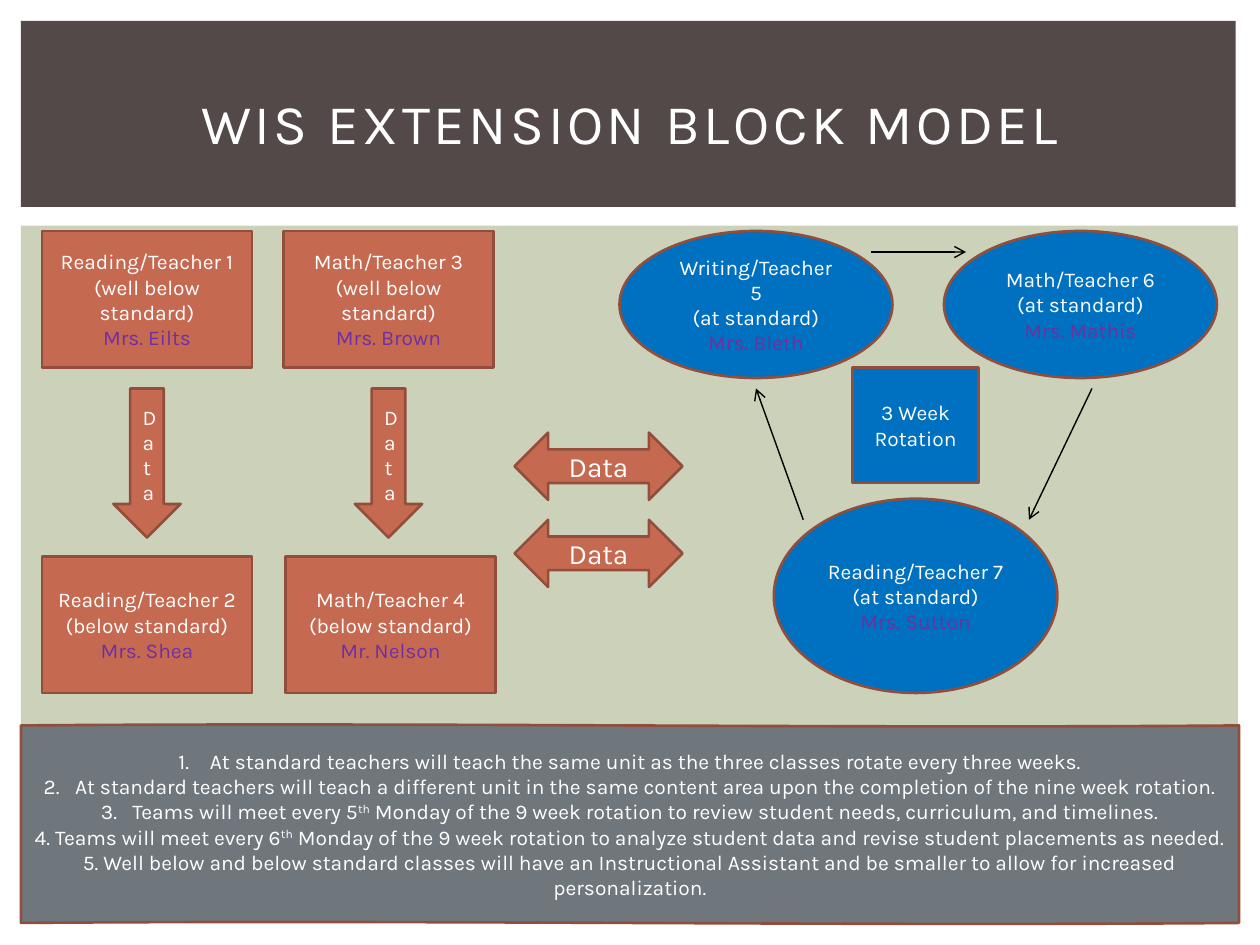
"""Build the extension block model slide."""
from dataclasses import dataclass

from lxml.etree import SubElement
from pptx import Presentation
from pptx.dml.color import RGBColor
from pptx.enum.shapes import MSO_CONNECTOR, MSO_SHAPE
from pptx.enum.text import MSO_ANCHOR, PP_ALIGN
from pptx.oxml.ns import qn
from pptx.util import Inches, Pt

COLUMNS, ROWS = 120, 90
WIDTH, HEIGHT = Inches(10), Inches(7.5)
FONT = "Karla"
WHITE, BLACK, SAGE, BROWN = "FFFFFF", "000000", "CCD1B9", "534949"
RUST, EDGE, BLUE, PURPLE, GREY = "C66951", "924E3C", "0070C0", "7030A0", "6F777D"


@dataclass(frozen=True)
class Box:
    """A place on the grid: left column, top row, columns wide, rows high."""

    column: float
    row: float
    columns: float
    rows: float


@dataclass(frozen=True)
class Teacher:
    """One class with its subject, level and teacher."""

    box: Box
    subject: str
    level: str
    name: str
    kind: MSO_SHAPE = MSO_SHAPE.RECTANGLE
    fill: str = RUST


@dataclass(frozen=True)
class Label:
    """A filled shape with one caption."""

    box: Box
    text: str
    kind: MSO_SHAPE
    size: int = 12
    fill: str = RUST


@dataclass(frozen=True)
class Arrow:
    """A rotation arrow between two grid points."""

    start: tuple[float, float]
    end: tuple[float, float]


@dataclass(frozen=True)
class Rule:
    """A line of the rules; its pieces alternate normal and superscript."""

    pieces: tuple[str, ...]
    numbered: bool = False


OVAL, DOWN, BOTH = MSO_SHAPE.OVAL, MSO_SHAPE.DOWN_ARROW, MSO_SHAPE.LEFT_RIGHT_ARROW
TEACHERS = (
    Teacher(Box(4, 22, 20, 13), "Reading/Teacher 1", "(well below standard)", "Mrs. Eilts"),
    Teacher(Box(27, 22, 20, 13), "Math/Teacher 3", "(well below standard)", "Mrs. Brown"),
    Teacher(Box(4, 53, 20, 13), "Reading/Teacher 2", "(below standard)", "Mrs. Shea"),
    Teacher(Box(27.2, 53, 20, 13), "Math/Teacher 4", "(below standard)", "Mr. Nelson"),
    Teacher(Box(59, 22, 26, 14), "Writing/Teacher 5", "(at standard)", "Mrs. Bleth", OVAL, BLUE),
    Teacher(Box(73.7, 47.5, 27, 18.5), "Reading/Teacher 7", "(at standard)", "Mrs. Sutton", OVAL, BLUE),
    Teacher(Box(89.9, 22, 26, 14), "Math/Teacher 6", "(at standard)", "Mrs. Mathis", OVAL, BLUE),
)
LABELS = (
    *(Label(Box(49, row, 16, 6.4), "Data", BOTH, 16) for row in (41.2, 49.5)),
    *(Label(Box(column, 37, 6.4, 14.2), "Data", DOWN) for column in (10.8, 33.8)),
    Label(Box(81.2, 35, 12, 11), "3 Week Rotation", MSO_SHAPE.RECTANGLE, fill=BLUE),
)
ARROWS = (
    Arrow((104, 37), (98, 49.5)),
    Arrow((76.5, 49.5), (72, 37)),
    Arrow((83, 24), (92, 24)),
)
RULES = (
    Rule(("At standard teachers will teach the same unit as the three classes rotate every three weeks.",), True),
    Rule(("At standard teachers will teach a different unit in the same content area upon the "
          "completion of the nine week rotation.",), True),
    Rule(("Teams will meet every 5", "th", " Monday of the 9 week rotation to review student needs, "
          "curriculum, and timelines."), True),
    Rule(("4. Teams will meet every 6", "th", " Monday of the 9 week rotation to analyze student data "
          "and revise student placements as needed.")),
    Rule(("5. Well below and below standard classes will have an Instructional Assistant and be "
          "smaller to allow for increased personalization.",)),
)


def color(value: str) -> RGBColor:
    """Turn a hex string into a colour."""
    return RGBColor.from_string(value)


def across(columns: float) -> int:
    """Convert grid columns to a length."""
    return round(WIDTH * columns / COLUMNS)


def down(rows: float) -> int:
    """Convert grid rows to a length."""
    return round(HEIGHT * rows / ROWS)


def place(box: Box) -> tuple[int, int, int, int]:
    """Give the left, top, width and height of a box."""
    return across(box.column), down(box.row), across(box.columns), down(box.rows)


def add_block(slide, kind: MSO_SHAPE, box: Box, fill: str, edge: str | None = EDGE):
    """Draw a filled shape, outlined unless edge is None."""
    shape = slide.shapes.add_shape(kind, *place(box))
    shape.shadow.inherit = False
    shape.fill.solid()
    shape.fill.fore_color.rgb = color(fill)
    if edge is None:
        shape.line.fill.background()
    else:
        shape.line.color.rgb = color(edge)
        shape.line.width = Pt(1.5)
    return shape


def write(shape, lines: tuple[tuple[str, ...], ...], size: int = 12, last: str = WHITE) -> None:
    """Write centred paragraphs; odd pieces are raised and the last line has its own colour."""
    frame = shape.text_frame
    frame.word_wrap = True
    frame.vertical_anchor = MSO_ANCHOR.MIDDLE
    for index, pieces in enumerate(lines):
        paragraph = frame.add_paragraph() if index else frame.paragraphs[0]
        paragraph.alignment = PP_ALIGN.CENTER
        paragraph.font.name = FONT
        paragraph.font.size = Pt(size)
        paragraph.font.color.rgb = color(last if index == len(lines) - 1 else WHITE)
        for position, piece in enumerate(pieces):
            run = paragraph.add_run()
            run.text = piece
            if position % 2:
                run.font._element.set("baseline", "30000")


def add_title(slide, text: str) -> None:
    """Write the letter-spaced title."""
    title = slide.shapes.add_textbox(*place(Box(5, 4.7, 110, 13.8)))
    write(title, ((text,),), 32)
    title.text_frame.paragraphs[0].runs[0].font._element.set("spc", "200")


def add_teacher(slide, teacher: Teacher) -> None:
    """Draw a class with the teacher's name in purple."""
    shape = add_block(slide, teacher.kind, teacher.box, teacher.fill)
    write(shape, ((teacher.subject,), (teacher.level,), (teacher.name,)), last=PURPLE)


def add_label(slide, label: Label) -> None:
    """Draw a captioned shape."""
    write(add_block(slide, label.kind, label.box, label.fill), ((label.text,),), label.size)


def add_arrow(slide, arrow: Arrow) -> None:
    """Draw a thin line with an open arrowhead at its end."""
    (left, top), (right, bottom) = arrow.start, arrow.end
    connector = slide.shapes.add_connector(
        MSO_CONNECTOR.STRAIGHT, across(left), down(top), across(right), down(bottom))
    connector.line.color.rgb = color(BLACK)
    connector.line.width = Pt(0.79)
    SubElement(connector.line._get_or_add_ln(), qn("a:tailEnd"), type="arrow")
    SubElement(connector._element.spPr, qn("a:effectLst"))


def add_rules(slide, rules: tuple[Rule, ...]) -> None:
    """Draw the panel of rules."""
    panel = add_block(slide, MSO_SHAPE.WAVE, Box(2, 69, 116, 19), GREY)
    panel.adjustments[0], panel.adjustments[1] = 0.005, 0
    write(panel, tuple(rule.pieces for rule in rules))
    for rule, paragraph in zip(rules, panel.text_frame.paragraphs):
        if rule.numbered:
            properties = paragraph._p.get_or_add_pPr()
            properties.set("marL", str(Inches(0.25)))
            properties.set("indent", str(-Inches(0.25)))
            number = SubElement(properties, qn("a:buAutoNum"), type="arabicPeriod")
            properties.insert(0, number)


def main() -> None:
    """Build and save the slide."""
    presentation = Presentation()
    presentation.slide_width, presentation.slide_height = WIDTH, HEIGHT
    slide = presentation.slides.add_slide(presentation.slide_layouts[6])
    add_block(slide, MSO_SHAPE.RECTANGLE, Box(2, 21.5, 115.9, 66.2), SAGE, None)
    add_block(slide, MSO_SHAPE.RECTANGLE, Box(2, 2, 115.7, 17.7), BROWN, None)
    add_title(slide, "WIS EXTENSION BLOCK MODEL")
    for teacher in TEACHERS:
        add_teacher(slide, teacher)
    for label in LABELS:
        add_label(slide, label)
    for arrow in ARROWS:
        add_arrow(slide, arrow)
    add_rules(slide, RULES)
    presentation.save("out.pptx")


if __name__ == "__main__":
    main()
